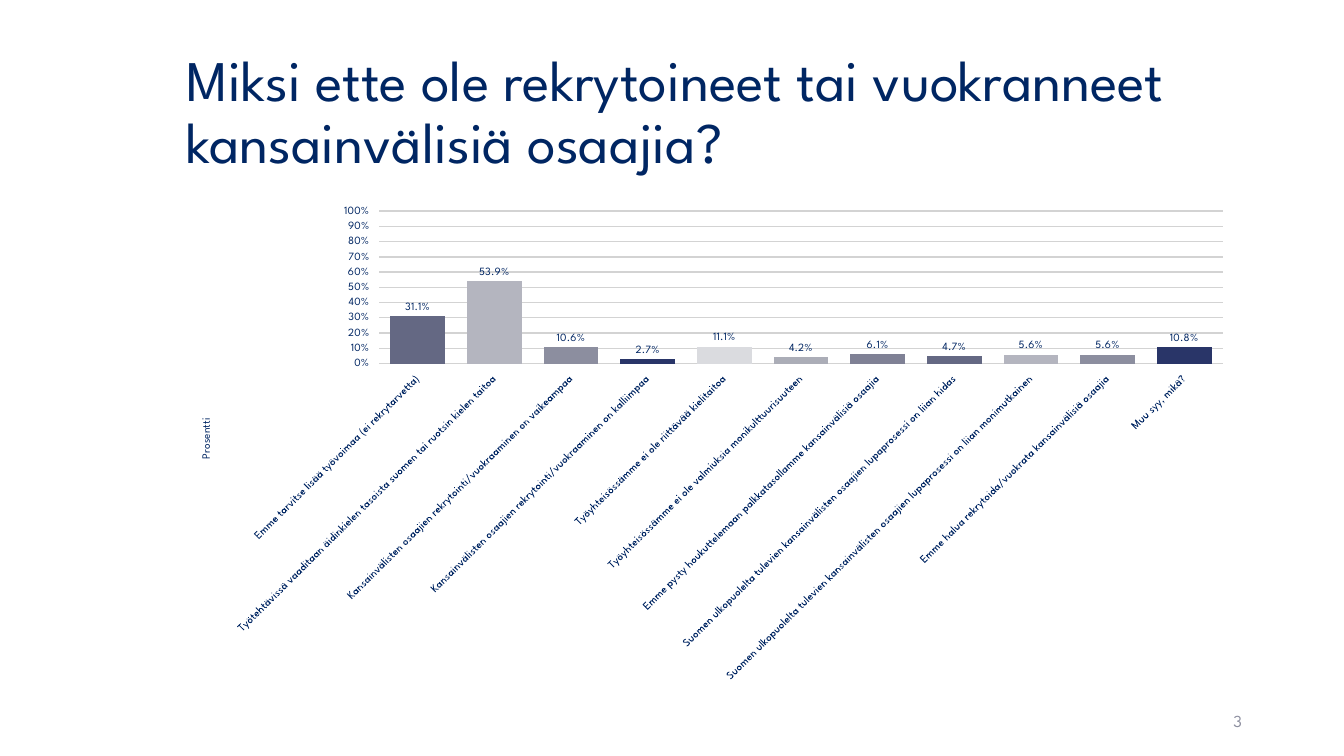
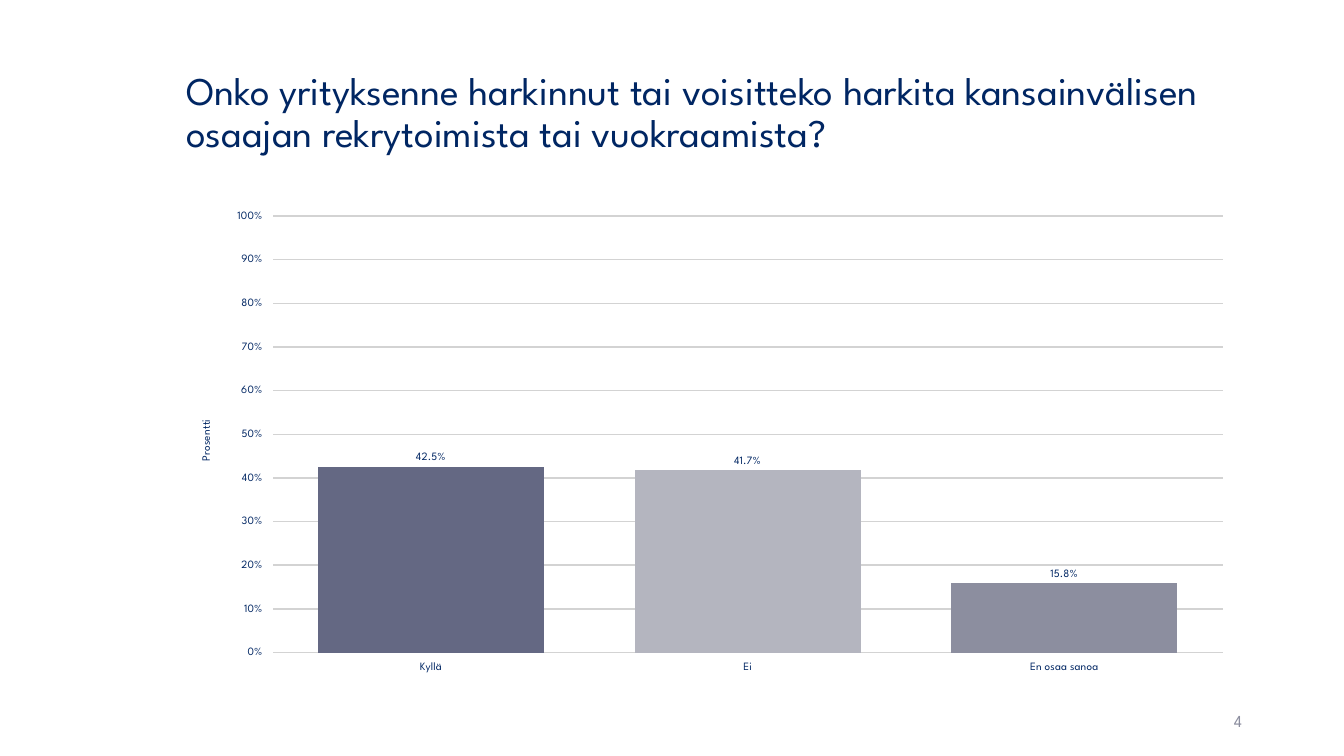
from dataclasses import dataclass
from itertools import cycle

from lxml import etree
from pptx import Presentation
from pptx.chart.axis import ValueAxis
from pptx.chart.chart import Chart
from pptx.chart.data import CategoryChartData
from pptx.dml.color import RGBColor
from pptx.enum.chart import XL_CHART_TYPE, XL_LABEL_POSITION
from pptx.enum.text import MSO_ANCHOR, PP_ALIGN
from pptx.oxml.ns import qn
from pptx.slide import Slide
from pptx.text.text import Font
from pptx.util import Cm, Pt

COLUMNS = XL_CHART_TYPE.COLUMN_CLUSTERED
OUTSIDE_END = XL_LABEL_POSITION.OUTSIDE_END
MIDDLE = MSO_ANCHOR.MIDDLE
LEFT, RIGHT = PP_ALIGN.LEFT, PP_ALIGN.RIGHT
BLANK_LAYOUT = 6
DEGREE = 60000


@dataclass(frozen=True)
class Theme:
    font: str = "League Spartan"
    text: str = "002663"
    muted: str = "8C8E9F"
    grid: str = "D3D3D3"
    columns: tuple[str, ...] = (
        "646883", "B4B5BF", "8C8E9F", "293568", "DADBDF", "ABADB7", "7F8195",
    )
    page_number_size: int = 12
    chart_size: int = 18
    label_size: int = 8


@dataclass(frozen=True)
class Box:
    left: float
    top: float
    width: float
    height: float

    def lengths(self) -> tuple[Cm, Cm, Cm, Cm]:
        return Cm(self.left), Cm(self.top), Cm(self.width), Cm(self.height)


@dataclass(frozen=True)
class Question:
    title: str
    title_size: int
    page: int
    answers: dict[str, float]
    plot: dict[str, float]
    label_angle: int = 0


THEME = Theme()
TITLE_BOX = Box(4.45, 1.02, 26.9, 3.68)
CHART_BOX = Box(4.45, 5.08, 26.9, 12.09)
PAGE_NUMBER_BOX = Box(23.93, 17.65, 7.62, 1.02)

QUESTIONS = (
    Question(
        title="Miksi ette ole rekrytoineet tai vuokranneet kansainvälisiä osaajia?",
        title_size=41,
        page=3,
        answers={
            "Emme tarvitse lisää työvoimaa (ei rekrytarvetta)": 0.311,
            "Työtehtävissä vaaditaan äidinkielen tasoista suomen tai ruotsin kielen taitoa": 0.539,
            "Kansainvälisten osaajien rekrytointi/vuokraaminen on vaikeampaa": 0.106,
            "Kansainvälisten osaajien rekrytointi/vuokraaminen on kalliimpaa": 0.027,
            "Työyhteisössämme ei ole riittävää kielitaitoa": 0.111,
            "Työyhteisössämme ei ole valmiuksia monikulttuurisuuteen": 0.042,
            "Emme pysty houkuttelemaan palkkatasollamme kansainvälisiä osaajia": 0.061,
            "Suomen ulkopuolelta tulevien kansainvälisten osaajien lupaprosessi on liian hidas": 0.047,
            "Suomen ulkopuolelta tulevien kansainvälisten osaajien lupaprosessi on liian monimutkainen": 0.056,
            "Emme halua rekrytoida/vuokrata kansainvälisiä osaajia": 0.056,
            "Muu syy, mikä?": 0.108,
        },
        plot={"x": 0.19, "y": 0.02, "w": 0.79, "h": 0.32},
        label_angle=-45,
    ),
    Question(
        title="Onko yrityksenne harkinnut tai voisitteko harkita kansainvälisen "
        "osaajan rekrytoimista tai vuokraamista?",
        title_size=28,
        page=4,
        answers={"Kyllä": 0.425, "Ei": 0.417, "En osaa sanoa": 0.158},
        plot={"x": 0.09, "y": 0.03, "w": 0.89, "h": 0.91},
    ),
)


def style_font(font: Font, size: int, color: str = THEME.text) -> None:
    font.name = THEME.font
    font.size = Pt(size)
    font.bold = False
    font.color.rgb = RGBColor.from_string(color)


def add_text(
    slide: Slide,
    text: str,
    box: Box,
    *,
    size: int,
    color: str = THEME.text,
    align: PP_ALIGN = LEFT,
    line_spacing: float = 1.0,
) -> None:
    frame = slide.shapes.add_textbox(*box.lengths()).text_frame
    frame.word_wrap = True
    frame.vertical_anchor = MIDDLE
    paragraph = frame.paragraphs[0]
    paragraph.alignment = align
    paragraph.line_spacing = line_spacing
    run = paragraph.add_run()
    run.text = text
    style_font(run.font, size, color)


def set_layout(parent: etree._Element, index: int, target: str = "", **position: float) -> None:
    """Fix a chart part at fractions of the chart area."""
    for layout in parent.findall(qn("c:layout")):
        parent.remove(layout)
    layout = etree.Element(qn("c:layout"))
    manual = etree.SubElement(layout, qn("c:manualLayout"))
    if target:
        etree.SubElement(manual, qn("c:layoutTarget")).set("val", target)
    for mode in ("xMode", "yMode"):
        etree.SubElement(manual, qn(f"c:{mode}")).set("val", "edge")
    for name, fraction in position.items():
        etree.SubElement(manual, qn(f"c:{name}")).set("val", str(fraction))
    parent.insert(index, layout)


def style_value_axis(axis: ValueAxis) -> None:
    axis.minimum_scale, axis.maximum_scale, axis.major_unit = 0, 1, 0.1
    axis.tick_labels.number_format = "0%"
    axis.tick_labels.number_format_is_linked = False
    axis.has_major_gridlines = True
    grid_line = axis.major_gridlines.format.line
    grid_line.width = Pt(1)
    grid_line.color.rgb = RGBColor.from_string(THEME.grid)

    title = axis.axis_title
    frame = title.text_frame
    frame.text = "Prosentti"
    style_font(frame.paragraphs[0].runs[0].font, THEME.label_size)
    body = title.element.find(".//" + qn("a:bodyPr"))
    body.set("rot", str(-90 * DEGREE))
    body.set("vert", "horz")
    set_layout(title.element, 1, x=0.02, y=0.45)


def style_columns(chart: Chart) -> None:
    plot = chart.plots[0]
    plot.gap_width = 40
    plot.overlap = -2
    plot.vary_by_categories = False
    series = plot.series[0]
    for index, color in zip(range(len(series.values)), cycle(THEME.columns)):
        fill = series.points[index].format.fill
        fill.solid()
        fill.fore_color.rgb = RGBColor.from_string(color)
    labels = series.data_labels
    labels.show_value = True
    labels.number_format = "0.0%"
    labels.number_format_is_linked = False
    labels.position = OUTSIDE_END
    style_font(labels.font, THEME.label_size)


def add_answer_chart(slide: Slide, question: Question) -> None:
    data = CategoryChartData(number_format="0.0%")
    data.categories = question.answers.keys()
    data.add_series("Series 1", question.answers.values())
    chart = slide.shapes.add_chart(COLUMNS, *CHART_BOX.lengths(), data).chart
    chart.has_title = False
    chart.has_legend = False
    style_font(chart.font, THEME.chart_size)
    for axis in (chart.category_axis, chart.value_axis):
        style_font(axis.tick_labels.font, THEME.label_size)
        axis.format.line.fill.background()
    style_value_axis(chart.value_axis)
    style_columns(chart)

    plot_area = chart.element.find(".//" + qn("c:plotArea"))
    set_layout(plot_area, 0, "inner", **question.plot)
    label_body = plot_area.find("/".join(map(qn, ("c:catAx", "c:txPr", "a:bodyPr"))))
    label_body.set("rot", str(question.label_angle * DEGREE))
    label_body.set("vert", "horz")


def add_question_slide(presentation: Presentation, question: Question) -> None:
    slide = presentation.slides.add_slide(presentation.slide_layouts[BLANK_LAYOUT])
    add_text(slide, question.title, TITLE_BOX, size=question.title_size, line_spacing=0.9)
    add_text(
        slide,
        str(question.page),
        PAGE_NUMBER_BOX,
        size=THEME.page_number_size,
        color=THEME.muted,
        align=RIGHT,
    )
    add_answer_chart(slide, question)


def main() -> None:
    presentation = Presentation()
    presentation.slide_width = Cm(33.87)
    presentation.slide_height = Cm(19.05)
    for question in QUESTIONS:
        add_question_slide(presentation, question)
    presentation.save("out.pptx")


if __name__ == "__main__":
    main()
